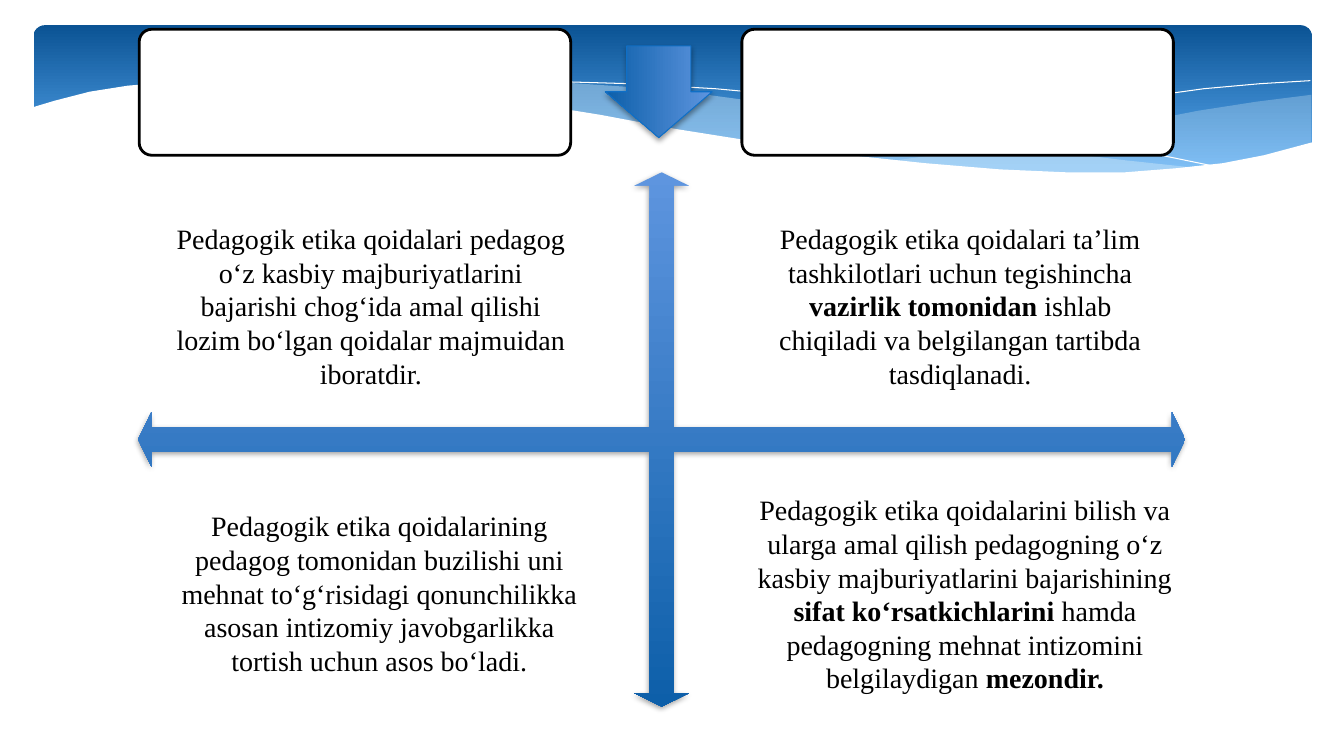
from lxml import etree
from pptx import Presentation
from pptx.dml.color import RGBColor
from pptx.enum.shapes import MSO_SHAPE
from pptx.enum.text import MSO_AUTO_SIZE, PP_ALIGN
from pptx.oxml.ns import qn
from pptx.util import Pt

ROUND_RECT = MSO_SHAPE.ROUNDED_RECTANGLE
RIGHT_ARROW = MSO_SHAPE.RIGHT_ARROW
QUAD_ARROW = MSO_SHAPE.QUAD_ARROW
CENTER = PP_ALIGN.CENTER
GROW = MSO_AUTO_SIZE.SHAPE_TO_FIT_TEXT

WHITE, BLACK = "FFFFFF", "000000"
ARROW_BLUES = [(0, "5E95DF"), (1, "0D5FA9")]
BANNER_BLUES = [(0, "0B5394"), (0.9, "59AAF2")]
TEXT_FORMAT = {"name": "Times New Roman", "size": Pt(20)}

# Wave outlines in points from the banner's top left corner
RIGHT_WAVE = [
    (912.7, 49.7), (873.1, 54.7), (831.4, 61.2), (801.8, 67), (748.6, 76.3), (699.6, 85),
    (653.5, 91.4), (611, 97.2), (652.8, 100.8), (702.5, 104.4), (747.1, 105.8), (786.7, 105.1),
    (821.3, 102.2), (853, 98.6), (881, 92.9), (912.7, 84.2)]
MIDDLE_WAVE = [
    (832.8, 102.2), (779.5, 96.5), (720.5, 89.3), (653.5, 78.5), (580.1, 65.5), (522.5, 55.4),
    (469.9, 48.2), (421.7, 43.9), (379.2, 41), (340.3, 39.6), (306.5, 39.6), (277, 41),
    (251, 43.9), (304.3, 49.7), (364.1, 58.3), (407.3, 65.5), (484.3, 79.2), (553.4, 90),
    (614.6, 97.9), (669.4, 103), (717.6, 105.8), (760.8, 106.6), (799, 105.1)]
FALLING_LINE = [
    (272.6, 46.8), (291.4, 43.9), (324.5, 41.8), (375.6, 40.3), (426, 41.8), (487.2, 45.4),
    (534, 49.7), (586.6, 56.2), (643.4, 64.1), (706.1, 74.2), (773.8, 86.4), (847.2, 101.5)]
RISING_LINE = [
    (565, 90.7), (602.4, 83.5), (667.9, 71.3), (721.2, 61.9), (778.8, 53.3), (835.7, 45.4),
    (876, 41.8), (912, 39.6)]
WHITE_WAVE = [
    (914, 83.5), (878.9, 92.9), (849.4, 98.6), (816.2, 102.2), (779.5, 105.1), (737.8, 105.1),
    (690.2, 103), (637, 98.6), (576.5, 92.2), (508.8, 82.1), (459.1, 74.2), (405.1, 64.1),
    (351.1, 55.4), (302.2, 48.2), (256.8, 43.2), (215.8, 40.3), (179, 38.2), (145.2, 38.2),
    (102.7, 40.3), (67.4, 43.2), (40.1, 47.5), (14.9, 54), (-1.7, 59), (-1.7, 143.3),
    (914, 143.3)]

# Box and runs (text, bold) of each quarter
QUARTERS = [
    ((118, 154.8, 293.8, 128), [
        ("Pedagogik etika qoidalari pedagog o‘z kasbiy majburiyatlarini bajarishi chog‘ida "
         "amal qilishi lozim bo‘lgan qoidalar majmuidan iboratdir.", False)]),
    ((548, 154.8, 275.8, 128), [
        ("Pedagogik etika qoidalari ta’lim tashkilotlari uchun tegishincha ", False),
        ("vazirlik tomonidan ", True),
        ("ishlab chiqiladi va belgilangan tartibda tasdiqlanadi.", False)]),
    ((118, 360, 306, 128), [
        ("Pedagogik etika qoidalarining pedagog tomonidan buzilishi uni mehnat "
         "to‘g‘risidagi qonunchilikka asosan intizomiy javobgarlikka tortish uchun asos "
         "bo‘ladi.", False)]),
    ((532, 348.5, 314.6, 152.6), [
        ("Pedagogik etika qoidalarini bilish va ularga amal qilish pedagogning o‘z kasbiy "
         "majburiyatlarini bajarishining ", False),
        ("sifat ko‘rsatkichlarini ", True),
        ("hamda pedagogning mehnat intizomini belgilaydigan ", False),
        ("mezondir.", True)]),
]


def color(hex_code):
    return RGBColor.from_string(hex_code)


def paint(sp, fill=None, line=None, width=0, alpha=None):
    """Fill with a colour or a list of gradient stops, and outline the shape."""
    sp.shadow.inherit = False
    if fill is None:
        sp.fill.background()
    elif isinstance(fill, str):
        sp.fill.solid()
        sp.fill.fore_color.rgb = color(fill)
    else:
        sp.fill.gradient()
        sp.fill.gradient_angle = 270
        for stop, (position, hex_code) in zip(sp.fill.gradient_stops, fill):
            stop.position = position
            stop.color.rgb = color(hex_code)
    if alpha is not None:
        clr = sp._element.spPr.find(".//" + qn("a:srgbClr"))
        etree.SubElement(clr, qn("a:alpha"), val=str(alpha * 1000))
    if line:
        sp.line.color.rgb = color(line)
        sp.line.width = Pt(width)
    else:
        sp.line.fill.background()


def add_shape(slide, kind, box, adjustments, **look):
    sp = slide.shapes.add_shape(kind, *map(Pt, box))
    for i, value in enumerate(adjustments):
        sp.adjustments[i] = value
    paint(sp, **look)
    return sp


def cast_shadow(sp):
    effects = sp._element.spPr.find(qn("a:effectLst"))
    shadow = etree.SubElement(effects, qn("a:outerShdw"), blurRad=str(Pt(4)), dist=str(Pt(2)),
                              dir="5400000", rotWithShape="0")
    clr = etree.SubElement(shadow, qn("a:srgbClr"), val=BLACK)
    etree.SubElement(clr, qn("a:alpha"), val="38000")


def add_wave(slide, left, top, points, closed=True, **look):
    start, *rest = [(Pt(x), Pt(y)) for x, y in points]
    builder = slide.shapes.build_freeform(*start)
    builder.add_line_segments(rest, close=closed)
    paint(builder.convert_to_shape(Pt(left), Pt(top)), **look)


def add_banner(slide, left, top, width, height):
    add_shape(slide, ROUND_RECT, (left, top, width, height), [0.071], fill=BANNER_BLUES)
    add_wave(slide, left, top, RIGHT_WAVE, fill="DBEFF9", alpha=29)
    add_wave(slide, left, top, MIDDLE_WAVE, fill="DBEFF9", alpha=40)
    for points in (FALLING_LINE, RISING_LINE):
        add_wave(slide, left, top, points, closed=False, line=WHITE)
    add_wave(slide, left, top, WHITE_WAVE, fill=WHITE)


def add_header(slide, left, top, width, height):
    """Two empty cards at the ends of the box, with a down arrow between."""
    card_width = 308.2
    for x in (left, left + width - card_width):
        add_shape(slide, ROUND_RECT, (x, top, card_width, height), [0.1],
                  fill=WHITE, line=BLACK, width=2)
    arrow_box = (left + 338.4, top + 6.5, 65.5, 76.3)
    arrow = add_shape(slide, RIGHT_ARROW, arrow_box, [0.6, 0.5],
                      fill=ARROW_BLUES, line="0F6FC6", width=0.75)
    arrow.rotation = 90
    cast_shadow(arrow)


def add_quarter_text(slide, box, runs):
    tf = slide.shapes.add_textbox(*map(Pt, box)).text_frame
    tf.word_wrap = True
    tf.auto_size = GROW
    p = tf.paragraphs[0]
    p.alignment = CENTER
    for text, bold in runs:
        r = p.add_run()
        r.text = text
        for name, value in {**TEXT_FORMAT, "bold": bold}.items():
            setattr(r.font, name, value)
        r.font.color.rgb = color(BLACK)


def add_cross(slide, box):
    cast_shadow(add_shape(slide, QUAD_ARROW, box, [0.046, 0.051, 0.025], fill=ARROW_BLUES))


def main():
    prs = Presentation()
    prs.slide_width, prs.slide_height = Pt(960), Pt(540)
    slide = prs.slides.add_slide(prs.slide_layouts[6])
    add_banner(slide, 24, 18, 913, 112.3)
    add_header(slide, 99.4, 20.9, 738.7, 90)
    for box, runs in QUARTERS:
        add_quarter_text(slide, box, runs)
    add_cross(slide, (98.6, 123.1, 748.1, 381.6))
    prs.save("out.pptx")


if __name__ == "__main__":
    main()
